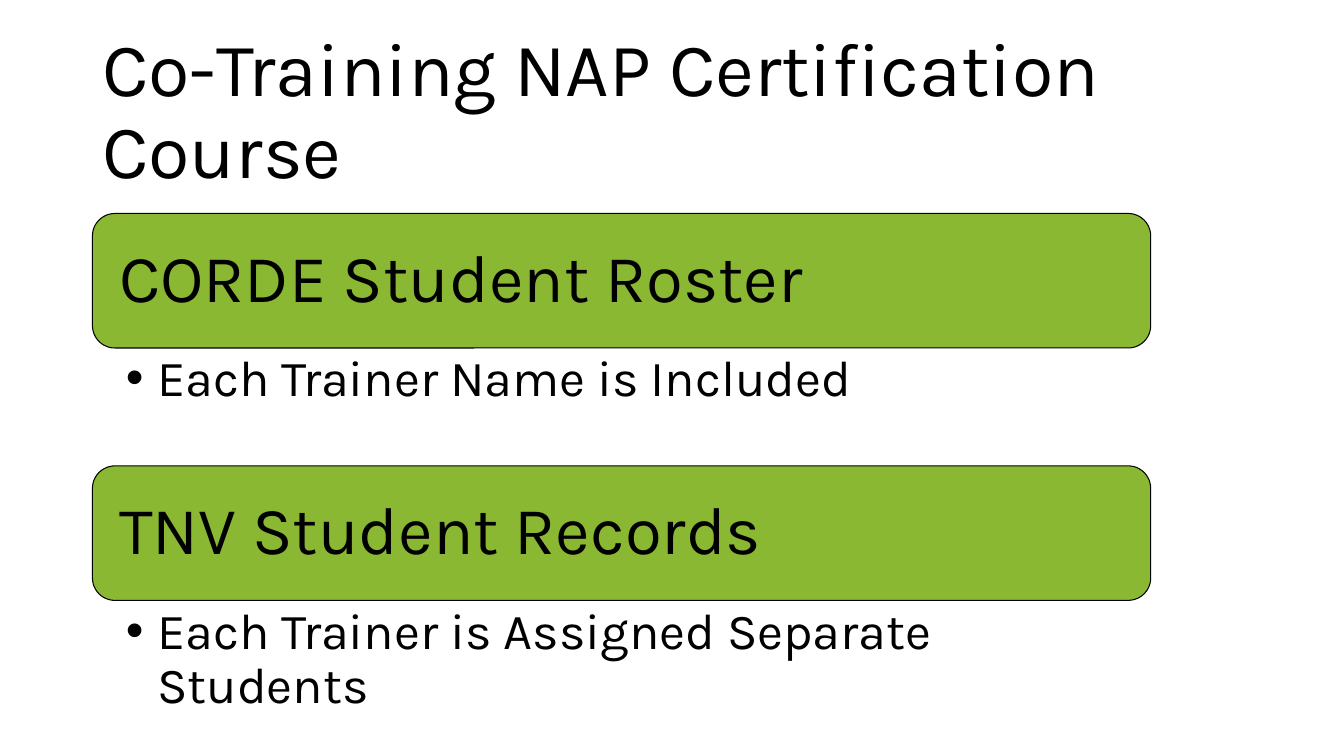
from lxml.etree import SubElement
from pptx import Presentation
from pptx.dml.color import RGBColor
from pptx.enum.shapes import MSO_SHAPE
from pptx.enum.text import MSO_ANCHOR, MSO_AUTO_SIZE, PP_ALIGN
from pptx.oxml.ns import qn
from pptx.util import Cm, Pt


def color(value):
    return RGBColor.from_string(value)


def write(sp, text, size, font="Karla", ink="000000", anchor=MSO_ANCHOR.TOP,
          insets=(0.25, 0.13, 0.25, 0.13), after=0):
    """Fill a shape with one left-aligned paragraph; insets in cm."""
    tf = sp.text_frame
    tf.word_wrap = True
    tf.auto_size = MSO_AUTO_SIZE.NONE
    tf.vertical_anchor = anchor
    (tf.margin_left, tf.margin_top,
     tf.margin_right, tf.margin_bottom) = map(Cm, insets)
    p = tf.paragraphs[0]
    p.alignment = PP_ALIGN.LEFT
    p.line_spacing = 0.9
    p.space_before, p.space_after = Pt(0), Pt(after)
    r = p.add_run()
    r.text = text
    r.font.name, r.font.size = font, Pt(size)
    r.font.color.rgb = color(ink)
    return p


class SlideBuilder:
    green = "8AB833"
    black = "000000"
    left, width = 2.33, 26.67

    def __init__(self, slide):
        self.s = slide

    def place(self, sp, left, top, width, height):
        sp.left, sp.top = Cm(left), Cm(top)
        sp.width, sp.height = Cm(width), Cm(height)

    def title(self, text):
        sp = self.s.shapes.title
        self.place(sp, self.left, 1.01, 29.21, 3.68)
        write(sp, text, 54, anchor=MSO_ANCHOR.MIDDLE)

    def banner(self, text, top, height):
        sp = self.s.shapes.add_shape(
            MSO_SHAPE.ROUNDED_RECTANGLE,
            Cm(self.left), Cm(top), Cm(self.width), Cm(height))
        sp.shadow.inherit = False
        sp.fill.solid()
        sp.fill.fore_color.rgb = color(self.green)
        sp.line.color.rgb = color(self.black)
        sp.line.width = Pt(0.75)
        write(sp, text, 48, anchor=MSO_ANCHOR.MIDDLE,
              insets=(0.51, 0.5, 0.51, 0.5))

    def bullet(self, sp, text, top, height):
        self.place(sp, self.left, top, self.width, height)
        p = write(sp, text, 36, insets=(0.84, 0.13, 0.71, 0.13), after=7)
        pPr = p._p.get_or_add_pPr()
        indent = Cm(0.79)
        pPr.set("marL", str(indent))
        pPr.set("indent", str(-indent))
        SubElement(pPr, qn("a:buChar")).set("char", "•")


def main():
    prs = Presentation()
    prs.slide_width, prs.slide_height = Cm(33.87), Cm(19.05)
    two_content = prs.slide_layouts[3]
    s = prs.slides.add_slide(two_content)
    builder = SlideBuilder(s)

    # Title
    builder.title("Co-Training NAP Certification Course")

    # Sections: a banner with its bullet below
    sections = [
        ("CORDE Student Roster", "Each Trainer Name is Included"),
        ("TNV Student Records", "Each Trainer is Assigned Separate Students"),
    ]
    first_top, banner_height, list_height = 5.38, 3.39, 2.97
    for i, (heading, detail) in enumerate(sections):
        top = first_top + i * (banner_height + list_height)
        builder.banner(heading, top, banner_height)
        builder.bullet(s.placeholders[i + 1], detail,
                       top + banner_height, list_height)

    prs.save("out.pptx")


if __name__ == "__main__":
    main()
